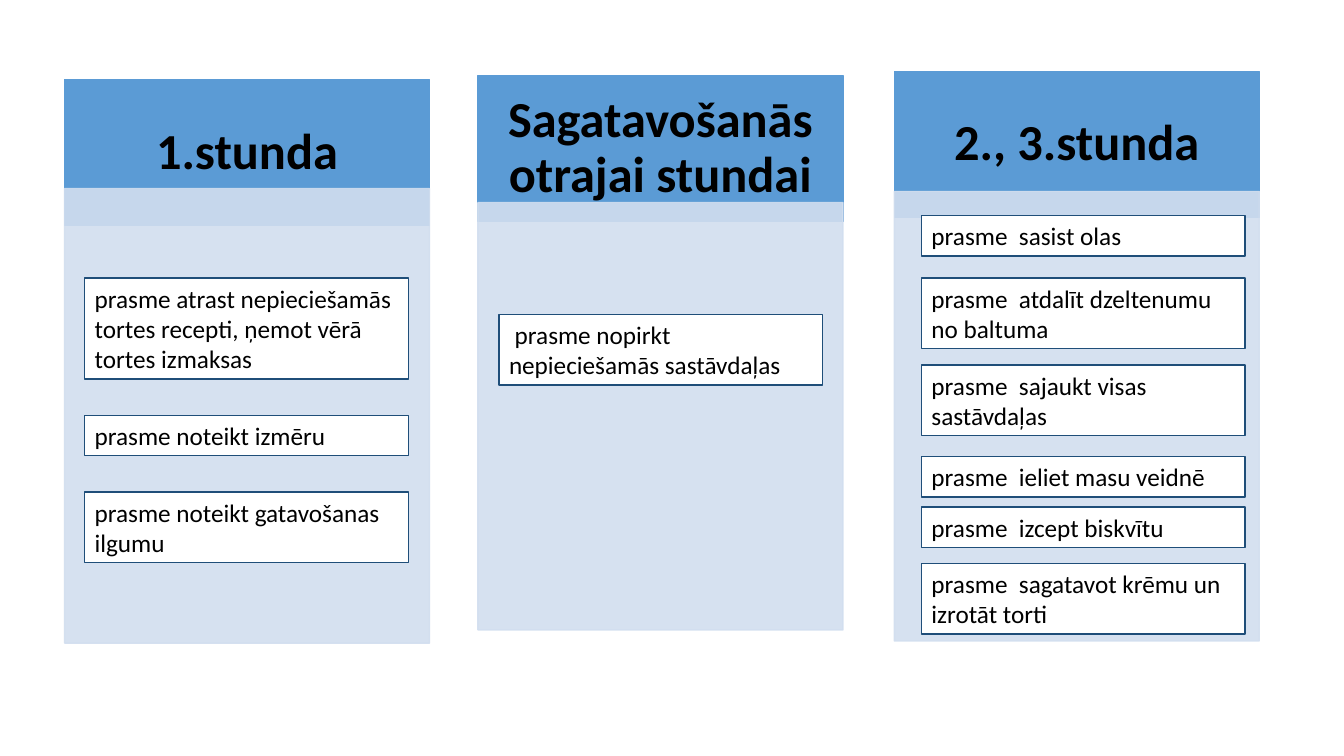
"""Build a slide of three lesson columns with the skills of each."""
from dataclasses import dataclass

from lxml.etree import SubElement
from pptx import Presentation
from pptx.dml.color import RGBColor as Rgb
from pptx.enum.shapes import MSO_SHAPE as Shape
from pptx.enum.text import MSO_ANCHOR as Anchor, MSO_AUTO_SIZE as Auto, PP_ALIGN as Align
from pptx.oxml.ns import qn
from pptx.util import Inches, Pt


@dataclass(frozen=True)
class Theme:
    font: str = "Calibri"
    head: str = "5B9BD5"
    body: str = "D2DEEF"
    card: str = "FFFFFF"
    edge: str = "1F4E79"
    ink: str = "000000"
    title: int = 36
    text: int = 18
    alpha: int = 90


THEME = Theme()
WIDTH, HEAD = 3.62, 1.45
CARD, LINE, PAD = 3.21, 0.3, 0.1

LESSONS = [
    ("1.stunda", 0.64, 0.79, 1.87, 4.51, 0.84, [
        ("prasme atrast nepieciešamās tortes recepti, ņemot vērā tortes izmaksas", 2.76, 3),
        ("prasme noteikt izmēru", 4.12, 1),
        ("prasme noteikt gatavošanas ilgumu", 4.88, 2),
    ]),
    ("Sagatavošanās otrajai stundai", 4.74, 0.75, 2.01, 4.24, 4.95, [
        (" prasme nopirkt nepieciešamās sastāvdaļas", 3.12, 2),
    ]),
    ("2., 3.stunda", 8.87, 0.71, 1.9, 4.46, 9.14, [
        ("prasme  sasist olas", 2.14, 1),
        ("prasme  atdalīt dzeltenumu no baltuma", 2.76, 2),
        ("prasme  sajaukt visas sastāvdaļas", 3.62, 2),
        ("prasme  ieliet masu veidnē", 4.53, 1),
        ("prasme  izcept biskvītu", 5.03, 1),
        ("prasme  sagatavot krēmu un izrotāt torti", 5.59, 2),
    ]),
]


def add_box(slide, left, top, width, height, fill, line):
    box = slide.shapes.add_shape(
        Shape.RECTANGLE, Inches(left), Inches(top), Inches(width), Inches(height))
    box.shadow.inherit = False
    box.fill.solid()
    box.fill.fore_color.rgb = Rgb.from_string(fill)
    box.line.color.rgb = Rgb.from_string(line)
    box.line.width = Pt(1)
    return box


def set_text(box, text, size, align, anchor, bold=False):
    frame = box.text_frame
    frame.word_wrap = True
    frame.vertical_anchor = anchor
    frame.text = text
    para = frame.paragraphs[0]
    para.alignment = align
    para.font.name = THEME.font
    para.font.size = Pt(size)
    para.font.bold = bold
    para.font.color.rgb = Rgb.from_string(THEME.ink)
    return frame


def add_head(slide, text, left, top):
    box = add_box(slide, left, top, WIDTH, HEAD, THEME.head, THEME.head)
    frame = set_text(box, text, THEME.title, Align.CENTER, Anchor.MIDDLE, True)
    frame.margin_left = frame.margin_right = Inches(0.28)
    frame.margin_top = frame.margin_bottom = Inches(0.16)
    frame.paragraphs[0].line_spacing = 0.9


def add_body(slide, left, top, height):
    box = add_box(slide, left, top, WIDTH, height, THEME.body, THEME.body)
    for tint in box._element.spPr.iter(qn("a:srgbClr")):
        SubElement(tint, qn("a:alpha"), val=str(THEME.alpha * 1000))


def add_card(slide, text, left, top, rows):
    box = add_box(slide, left, top, CARD, PAD + LINE * rows, THEME.card, THEME.edge)
    frame = set_text(box, text, THEME.text, Align.LEFT, Anchor.TOP)
    frame.auto_size = Auto.SHAPE_TO_FIT_TEXT


def main():
    deck = Presentation()
    deck.slide_width, deck.slide_height = Inches(13.33), Inches(7.5)
    slide = deck.slides.add_slide(deck.slide_layouts[6])
    for title, left, top, start, height, inset, skills in LESSONS:
        add_head(slide, title, left, top)
        add_body(slide, left, start, height)
        for text, place, rows in skills:
            add_card(slide, text, inset, place, rows)
    deck.save("out.pptx")


if __name__ == "__main__":
    main()
